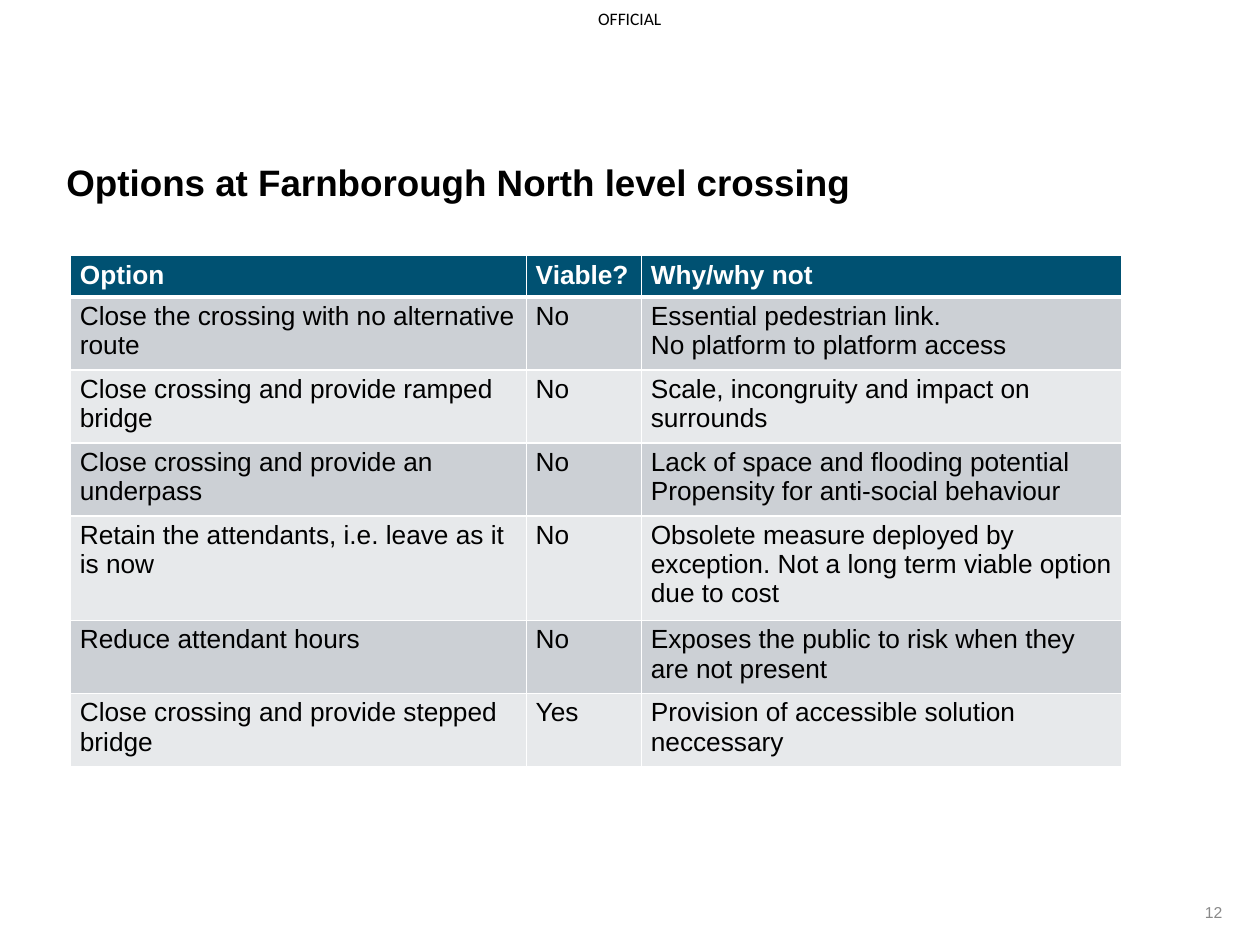
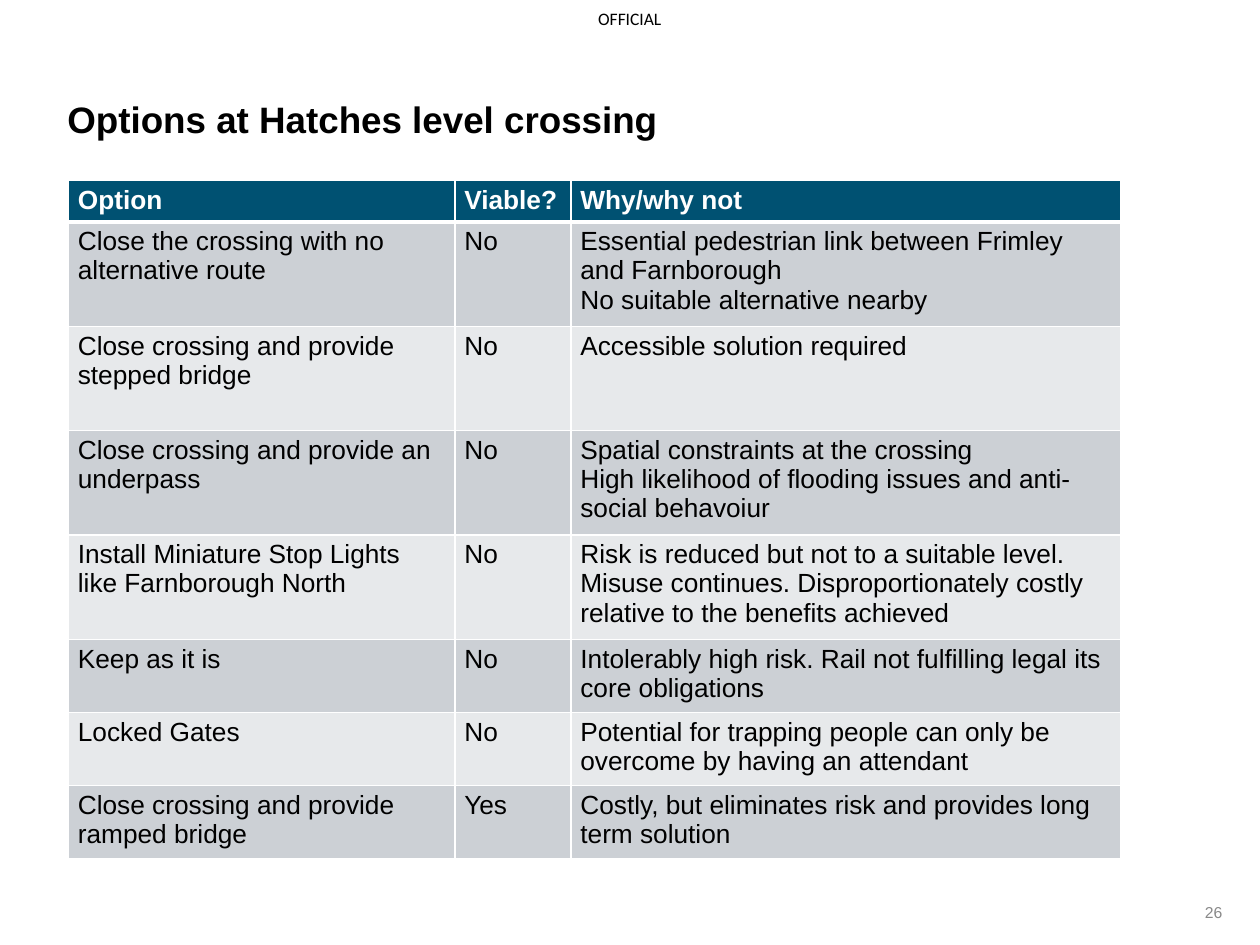
from pptx import Presentation
from pptx.dml.color import RGBColor
from pptx.enum.text import MSO_ANCHOR as Anchor, PP_ALIGN as Align
from pptx.oxml.xmlchemy import OxmlElement
from pptx.util import Cm, Pt

# Content: each row is option, viable, reasons (one per paragraph), lines of text
HEADINGS = ("Option", "Viable?", ["Why/why not"], 1)

PAGES = [
    {
        "title": "Options at Farnborough North level crossing",
        "title_at": (1.09, 3.1, 16.48),
        "number": "12",
        "table_at": (1.42, 5.15),
        "columns": (9.19, 2.32, 9.68),
        "rows": [
            ("Close the crossing with no alternative route", "No",
             ["Essential pedestrian link.", "No platform to platform access"], 2),
            ("Close crossing and provide ramped bridge", "No",
             ["Scale, incongruity and impact on surrounds"], 2),
            ("Close crossing and provide an underpass", "No",
             ["Lack of space and flooding potential",
              "Propensity for anti-social behaviour"], 2),
            ("Retain the attendants, i.e. leave as it is now", "No",
             ["Obsolete measure deployed by exception. "
              "Not a long term viable option due to cost"], 3),
            ("Reduce attendant hours", "No",
             ["Exposes the public to risk when they are not present"], 2),
            ("Close crossing and provide stepped bridge", "Yes",
             ["Provision of accessible solution neccessary"], 2),
        ],
    },
    {
        "title": "Options at Hatches level crossing",
        "title_at": (1.11, 1.82, 12.52),
        "number": "26",
        "table_at": (1.38, 3.64),
        "columns": (7.79, 2.34, 11.08),
        "rows": [
            ("Close the crossing with no alternative route", "No",
             ["Essential pedestrian link between Frimley and Farnborough",
              "No suitable alternative nearby"], 3),
            ("Close crossing and provide stepped bridge", "No",
             ["Accessible solution required"], 3),
            ("Close crossing and provide an underpass", "No",
             ["Spatial constraints at the crossing",
              "High likelihood of flooding issues and anti-social behavoiur"], 3),
            ("Install Miniature Stop Lights like Farnborough North", "No",
             ["Risk is reduced but not to a suitable level. Misuse continues. "
              "Disproportionately costly relative to the benefits achieved"], 3),
            ("Keep as it is", "No",
             ["Intolerably high risk. Rail not fulfilling legal its core obligations"], 2),
            ("Locked Gates", "No",
             ["Potential for trapping people can only be overcome by having an attendant"], 2),
            ("Close crossing and provide ramped bridge", "Yes",
             ["Costly, but eliminates risk and provides long term solution"], 2),
        ],
    },
]

# Shared look
BLACK, WHITE, GREY = "000000", "FFFFFF", "898989"
HEADER_FILL = "005172"
BAND_FILLS = ("CCD0D5", "E7E9EB")
LINE_HEIGHT, ROW_PADDING = 0.64, 0.18


def color(value):
    return RGBColor.from_string(value)


def write(frame, text, size=15, font="Arial", ink=BLACK, bold=False, align=Align.LEFT):
    """Fill a text frame with one paragraph, or one per item of a list."""
    for index, line in enumerate([text] if isinstance(text, str) else text):
        para = frame.add_paragraph() if index else frame.paragraphs[0]
        para.alignment = align
        span = para.add_run()
        span.text = line
        span.font.name, span.font.size, span.font.bold = font, Pt(size), bold
        span.font.color.rgb = color(ink)


def add_text(page, text, left, top, width, height, anchor=Anchor.MIDDLE, inset=None, **style):
    box = page.shapes.add_textbox(Cm(left), Cm(top), Cm(width), Cm(height))
    frame = box.text_frame
    frame.word_wrap = True
    frame.vertical_anchor = anchor
    if inset is not None:
        frame.margin_left = frame.margin_right = Cm(inset)
        frame.margin_top = frame.margin_bottom = Cm(inset)
    write(frame, text, **style)


def add_borders(cell, **widths):
    """Give the cell white edges; widths in points override the usual 1."""
    properties = cell._tc.get_or_add_tcPr()
    for side in "LRTB":
        line = OxmlElement(f"a:ln{side}")
        line.set("w", str(Pt(widths.get(side, 1))))
        fill = OxmlElement("a:solidFill")
        ink = OxmlElement("a:srgbClr")
        ink.set("val", WHITE)
        fill.append(ink)
        line.append(fill)
        properties.append(line)


def add_options_table(page, left, top, columns, rows):
    heights = [ROW_PADDING + LINE_HEIGHT * row[-1] for row in rows]
    table = page.shapes.add_table(len(rows), len(columns), Cm(left), Cm(top),
                                  Cm(sum(columns)), Cm(sum(heights))).table
    table.first_row = table.horz_banding = False
    for column, width in zip(table.columns, columns):
        column.width = Cm(width)
    for index, (*texts, _) in enumerate(rows):
        table.rows[index].height = Cm(heights[index])
        header = index == 0
        # A thick rule separates the header from the first option
        edges = {0: {"B": 3}, 1: {"T": 3}}.get(index, {})
        for cell, text in zip(table.rows[index].cells, texts):
            add_borders(cell, **edges)
            cell.fill.solid()
            cell.fill.fore_color.rgb = color(HEADER_FILL if header else BAND_FILLS[(index - 1) % 2])
            cell.margin_left = cell.margin_right = Cm(0.19)
            cell.margin_top = cell.margin_bottom = Cm(0.1)
            write(cell.text_frame, text, ink=WHITE if header else BLACK, bold=header)


def add_page(deck, content):
    page = deck.slides.add_slide(deck.slide_layouts[6])
    # Marking and page number
    add_text(page, "OFFICIAL", 11.68, 0, 2.03, 0.74, inset=0,
             size=10, font="Calibri", align=Align.CENTER)
    add_text(page, content["number"], 23.11, 18.14, 1.78, 0.51,
             size=9, ink=GREY, align=Align.RIGHT)
    # Title and table
    add_text(page, content["title"], *content["title_at"], 1.14,
             anchor=Anchor.TOP, size=21, bold=True)
    add_options_table(page, *content["table_at"], content["columns"],
                      [HEADINGS, *content["rows"]])


def main():
    deck = Presentation()
    deck.slide_width, deck.slide_height = Cm(25.4), Cm(19.05)
    for content in PAGES:
        add_page(deck, content)
    deck.save("out.pptx")


if __name__ == "__main__":
    main()
